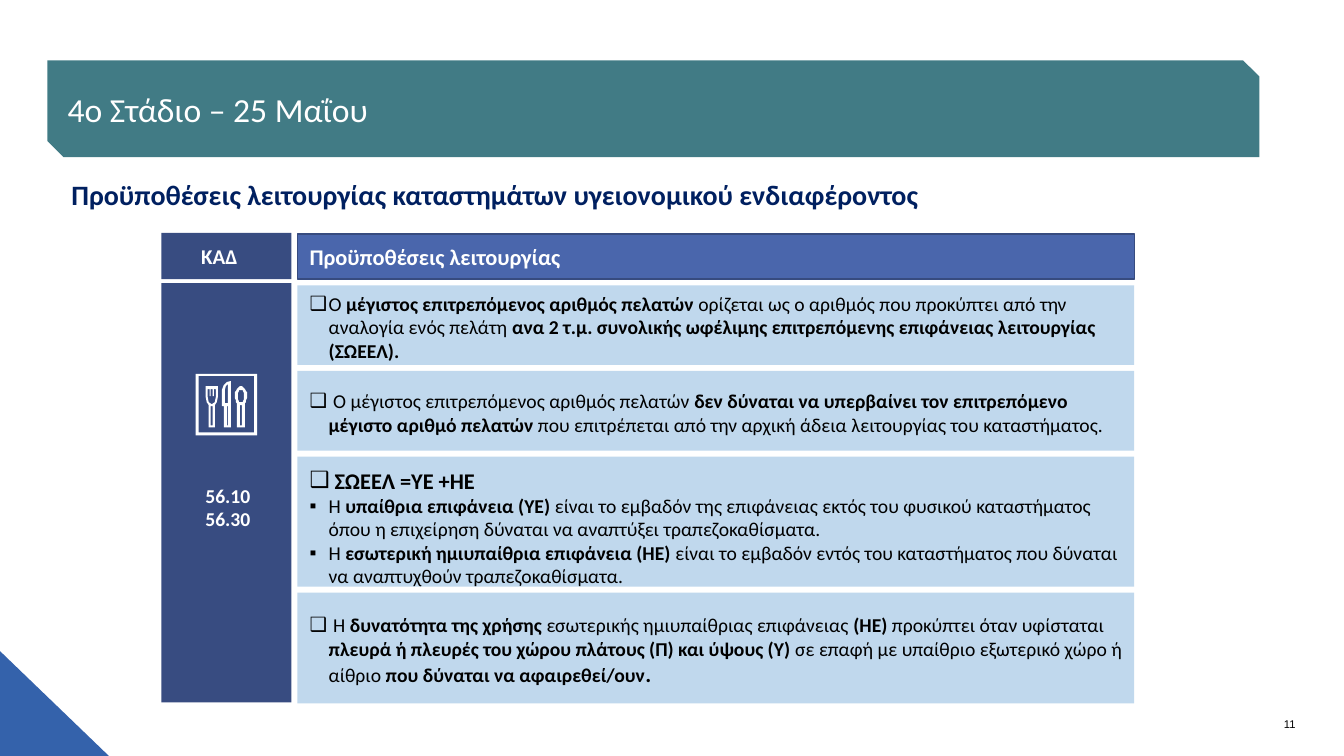
import math

from lxml import etree
from pptx import Presentation
from pptx.dml.color import RGBColor
from pptx.enum import shapes, text
from pptx.oxml import ns
from pptx.util import Inches, Pt

TEAL = RGBColor(0x41, 0x7B, 0x85)
NAVY = RGBColor(0x38, 0x4C, 0x81)
HEADER_BLUE = RGBColor(0x4A, 0x66, 0xAC)
HEADER_LINE = RGBColor(0x37, 0x4B, 0x7F)
PALE_BLUE = RGBColor(0xC0, 0xD8, 0xED)
CORNER_BLUE = RGBColor(0x34, 0x62, 0xAB)
HEADING_BLUE = RGBColor(0x00, 0x20, 0x60)
WHITE = RGBColor(0xFF, 0xFF, 0xFF)
BLACK = RGBColor(0, 0, 0)

ROW_GAP = 0.06
HANGING = Inches(0.19)
CONDITIONS = [
    (0.79, [("❑", 14, "Ο **μέγιστος επιτρεπόμενος αριθμός πελατών** ορίζεται ως ο αριθμός "
             "που προκύπτει από την αναλογία ενός πελάτη **ανα 2 τ.μ. συνολικής ωφέλιμης "
             "επιτρεπόμενης επιφάνειας λειτουργίας (ΣΩΕΕΛ).**")]),
    (0.79, [("❑", 14, " Ο μέγιστος επιτρεπόμενος αριθμός πελατών **δεν δύναται να υπερβαίνει "
             "τον επιτρεπόμενο μέγιστο αριθμό πελατών** που επιτρέπεται από την αρχική άδεια "
             "λειτουργίας του καταστήματος.")]),
    (1.29, [("❑", 16, "** ΣΩΕΕΛ =ΥΕ +ΗΕ**"),
            ("▪", 14, "Η **υπαίθρια επιφάνεια (ΥΕ)** είναι το εμβαδόν της επιφάνειας εκτός του "
             "φυσικού καταστήματος όπου η επιχείρηση δύναται να αναπτύξει τραπεζοκαθίσματα."),
            ("▪", 14, "Η **εσωτερική ημιυπαίθρια επιφάνεια (ΗΕ)** είναι το εμβαδόν εντός του "
             "καταστήματος που δύναται να αναπτυχθούν τραπεζοκαθίσματα.")]),
    (1.1, [("❑", 14, " Η **δυνατότητα της χρήσης** εσωτερικής ημιυπαίθριας επιφάνειας **(ΗΕ)** "
            "προκύπτει όταν υφίσταται **πλευρά ή πλευρές του χώρου πλάτους (Π) και ύψους (Υ)** "
            "σε επαφή με υπαίθριο εξωτερικό χώρο ή αίθριο **που δύναται να αφαιρεθεί/ουν****.**")]),
]


def place(shape, left, top, width, height):
    shape.left, shape.top = Inches(left), Inches(top)
    shape.width, shape.height = Inches(width), Inches(height)


def add_block(slide, kind, box, fill, line=None):
    shape = slide.shapes.add_shape(kind, *map(Inches, box))
    shape.shadow.inherit = False
    shape.fill.solid()
    shape.fill.fore_color.rgb = fill
    if line is None:
        shape.line.fill.background()
    else:
        shape.line.color.rgb = line
        shape.line.width = Pt(1)
    return shape


def set_frame(shape, insets, anchor=text.MSO_ANCHOR.MIDDLE):
    frame = shape.text_frame
    frame.word_wrap = True
    frame.auto_size = text.MSO_AUTO_SIZE.NONE
    frame.vertical_anchor = anchor
    (frame.margin_left, frame.margin_top,
     frame.margin_right, frame.margin_bottom) = map(Inches, insets)
    return frame


def set_font(paragraph, size, color, bold=None, name="Calibri"):
    font = paragraph.font
    font.size, font.name, font.bold = Pt(size), name, bold
    font.color.rgb = color


def write_lines(frame, lines, size, color, bold=False,
                align=text.PP_ALIGN.LEFT, name="Calibri"):
    for index, line in enumerate(lines):
        paragraph = frame.add_paragraph() if index else frame.paragraphs[0]
        paragraph.text = line
        paragraph.alignment = align
        set_font(paragraph, size, color, bold, name)


def write_bullet(paragraph, bullet, size, marked_text):
    paragraph.alignment = text.PP_ALIGN.LEFT
    properties = paragraph._p.get_or_add_pPr()
    properties.set("marL", str(HANGING))
    properties.set("indent", str(-HANGING))
    etree.SubElement(properties, ns.qn("a:buFont"), typeface="Arial")
    etree.SubElement(properties, ns.qn("a:buChar"), char=bullet)
    set_font(paragraph, size, BLACK)
    for index, piece in enumerate(marked_text.split("**")):
        if piece:
            run = paragraph.add_run()
            run.text = piece
            run.font.bold = index % 2 == 1


def add_banner(slide, box):
    add_block(slide, shapes.MSO_SHAPE.SNIP_2_DIAG_RECTANGLE, box, TEAL)
    title = slide.shapes.title
    place(title, *box)
    slide.shapes._spTree.append(title._element)
    frame = set_frame(title, (0.2, 0.02, 0.2, 0.02))
    write_lines(frame, ["4o Στάδιο – 25 Μαΐου"], 24, WHITE)


def add_heading(slide, box):
    heading = slide.shapes.add_textbox(*map(Inches, box))
    frame = set_frame(heading, (0.1, 0.05, 0.1, 0.05), text.MSO_ANCHOR.TOP)
    write_lines(frame, ["Προϋποθέσεις λειτουργίας καταστημάτων υγειονομικού ενδιαφέροντος"],
                20, HEADING_BLUE, True)


def ellipse_arc(x, y, radius_x, radius_y, start, end, steps=24):
    angles = [math.radians(start + (end - start) * step / steps) for step in range(steps + 1)]
    return [(x + radius_x * math.cos(angle), y + radius_y * math.sin(angle)) for angle in angles]


def rectangle(left, top, right, bottom):
    return [(left, top), (right, top), (right, bottom), (left, bottom)]


def add_cutlery_icon(slide, left, top):
    border = [rectangle(0, 0, 61, 61), rectangle(3, 2.5, 58, 58)]
    fork = [
        [(10, 12), (22, 12), (22, 23), (21, 28), (19, 31), (19, 53),
         (13, 53), (13, 31), (11, 28), (10, 23)],
        [(12, 15), (14, 15), (14, 22), (15, 22), (15, 15), (17, 15), (17, 22), (18, 22),
         (18, 15), (20, 15), (20, 23), (19, 28), (16, 30), (13, 28), (12, 23)],
        rectangle(15, 32, 17, 51),
    ]
    knife = [
        [(35, 7), (31, 8), (28, 11), (26, 16), (26, 32), (28, 32), (28, 53), (35, 53)],
        [(32, 10), (30, 12), (29, 16), (29, 29), (32, 29)],
        rectangle(31, 32, 32.5, 51),
    ]
    spoon = [
        ellipse_arc(45, 22, 6, 10, 48, -228) + [(41, 53), (49, 53)],
        ellipse_arc(45, 22, 3.5, 6.5, 0, 360),
        rectangle(44, 31, 46, 51),
    ]
    group = slide.shapes.add_group_shape()
    for contours in (border, fork, knife, spoon):
        builder = group.shapes.build_freeform(*contours[0][0], scale=Inches(0.01))
        builder.add_line_segments(contours[0][1:])
        for contour in contours[1:]:
            builder.move_to(*contour[0])
            builder.add_line_segments(contour[1:])
        shape = builder.convert_to_shape(Inches(left), Inches(top))
        shape.shadow.inherit = False
        shape.fill.solid()
        shape.fill.fore_color.rgb = WHITE
        shape.line.fill.background()


def add_code_column(slide, left, top, width, height):
    kind = shapes.MSO_SHAPE.RECTANGLE
    header = add_block(slide, kind, (left, top, width, 0.46), NAVY)
    write_lines(set_frame(header, (0.06, 0.06, 0.2, 0.06)), ["ΚΑΔ"],
                15, WHITE, True, text.PP_ALIGN.CENTER)
    codes = add_block(slide, kind, (left, top + 0.5, width, height - 0.5), NAVY)
    write_lines(set_frame(codes, (0.09, 0.34, 0.06, 0.06)), ["56.10", "56.30"],
                14, WHITE, True, text.PP_ALIGN.CENTER)
    add_cutlery_icon(slide, left + 0.34, top + 1.4)


def add_conditions(slide, left, top, width):
    kind = shapes.MSO_SHAPE.RECTANGLE
    header = add_block(slide, kind, (left, top, width, 0.45), HEADER_BLUE, HEADER_LINE)
    write_lines(set_frame(header, (0.12, 0.06, 0.08, 0.06)), ["Προϋποθέσεις λειτουργίας"],
                16, WHITE, True)
    row_top = top + 0.45 + ROW_GAP
    for height, bullets in CONDITIONS:
        row = add_block(slide, kind, (left, row_top, width, height), PALE_BLUE)
        anchor = text.MSO_ANCHOR.TOP if len(bullets) > 1 else text.MSO_ANCHOR.MIDDLE
        frame = set_frame(row, (0.12, 0.1, 0.08, 0.06), anchor)
        for index, bullet in enumerate(bullets):
            paragraph = frame.add_paragraph() if index else frame.paragraphs[0]
            write_bullet(paragraph, *bullet)
        row_top += height + ROW_GAP
    paragraph.runs[-1].font.size = Pt(16)


def add_page_number(slide, box):
    number = slide.shapes.add_textbox(*map(Inches, box))
    frame = set_frame(number, (0, 0, 0, 0), text.MSO_ANCHOR.BOTTOM)
    write_lines(frame, ["11"], 8, BLACK, align=text.PP_ALIGN.RIGHT, name="Arial")


def main():
    presentation = Presentation()
    presentation.slide_width, presentation.slide_height = Inches(13.33), Inches(7.5)
    slide = presentation.slides.add_slide(presentation.slide_layouts[5])
    add_block(slide, shapes.MSO_SHAPE.RIGHT_TRIANGLE, (0, 6.46, 1.08, 1.04), CORNER_BLUE)
    add_page_number(slide, (10.92, 7.1, 1.93, 0.15))
    add_banner(slide, (0.47, 0.6, 12.02, 0.96))
    add_heading(slide, (0.61, 1.71, 11.73, 0.44))
    add_code_column(slide, 1.6, 2.31, 1.29, 4.66)
    add_conditions(slide, 2.95, 2.32, 8.3)
    presentation.save("out.pptx")


if __name__ == "__main__":
    main()
